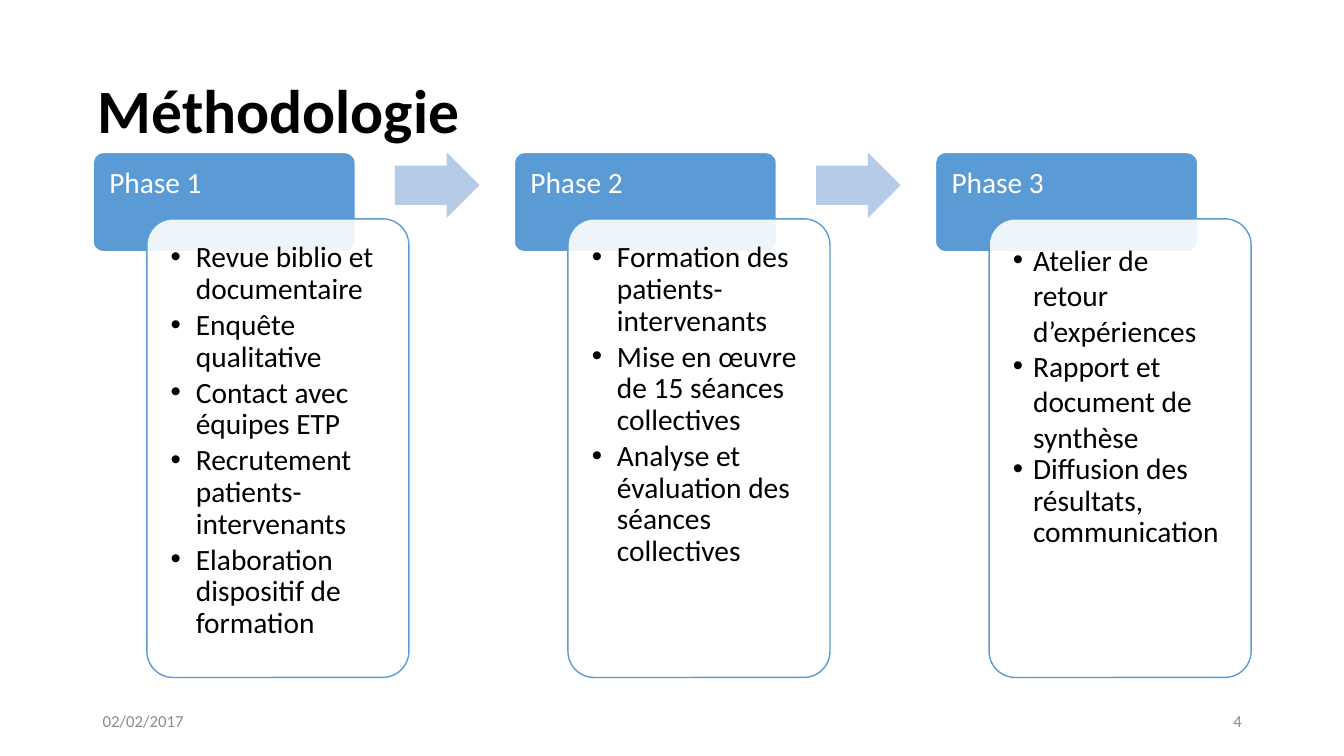
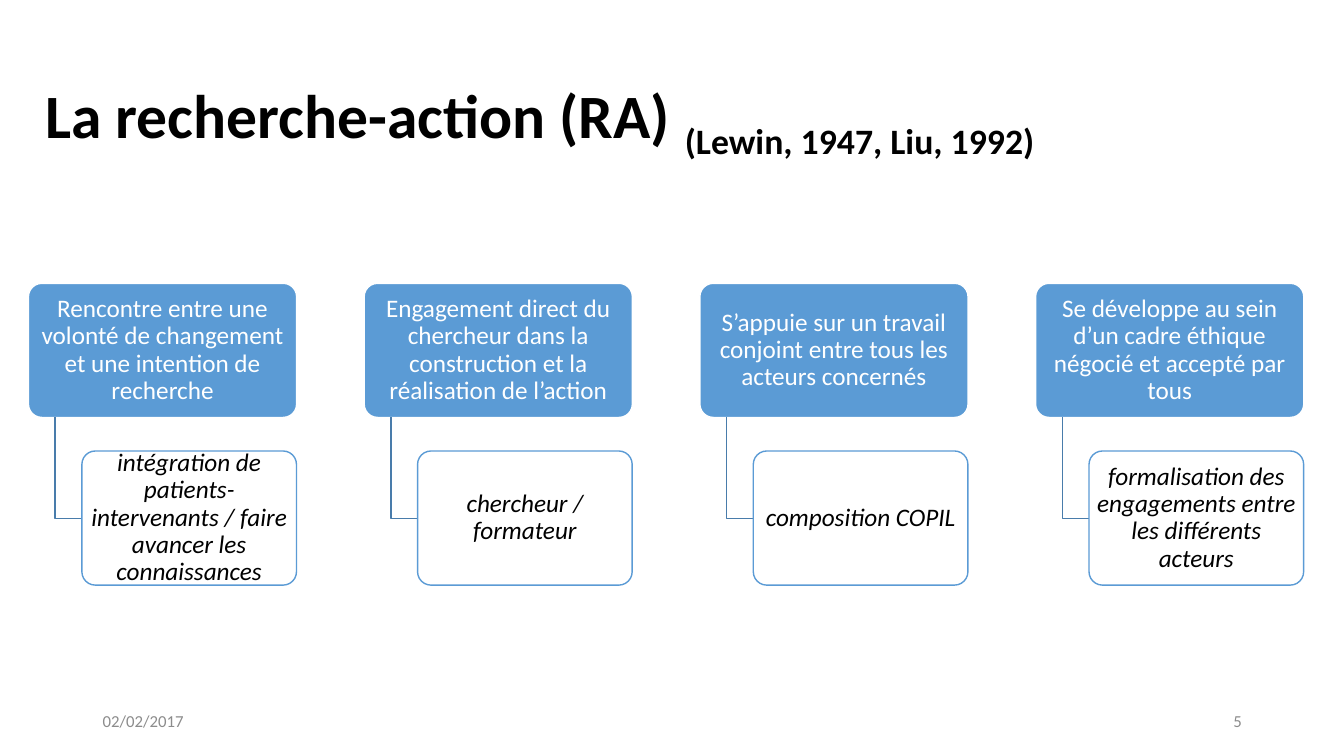
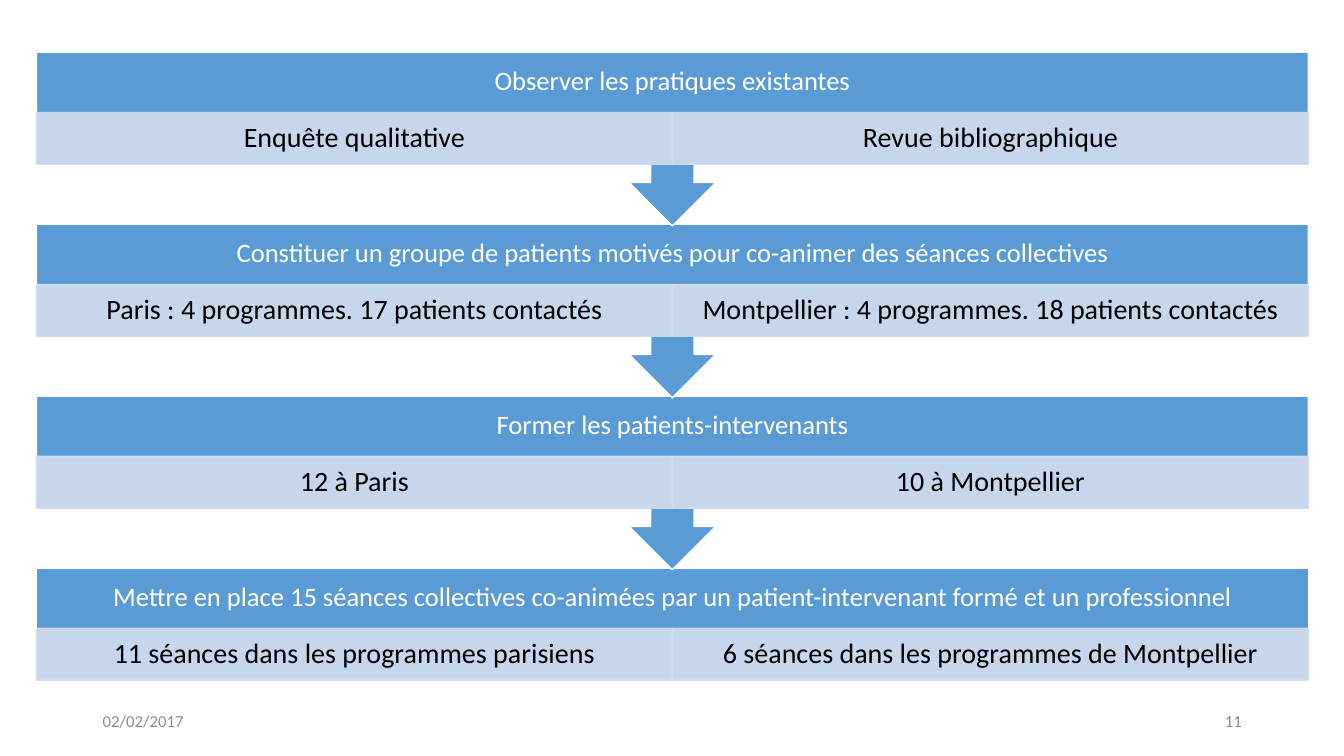
import pptx
import pptx.dml.color
import pptx.enum.shapes
import pptx.enum.text
import pptx.oxml
import pptx.oxml.ns
import pptx.util

Pt = pptx.util.Pt
RGBColor = pptx.dml.color.RGBColor
Kind = pptx.enum.shapes.MSO_SHAPE
Anchor = pptx.enum.text.MSO_ANCHOR
Align = pptx.enum.text.PP_ALIGN

FONT = "Calibri"
BLACK = RGBColor(0x00, 0x00, 0x00)
WHITE = RGBColor(0xFF, 0xFF, 0xFF)
BLUE = RGBColor(0x5B, 0x9B, 0xD5)
PALE_BLUE = RGBColor(0xD2, 0xDE, 0xEF)
ARROW_BLUE = RGBColor(0xB5, 0xCB, 0xE7)
HOOK_BLUE = RGBColor(0x49, 0x7C, 0xAB)
GREY = RGBColor(0x8C, 0x8C, 0x8C)

COMPARISON, TITLE_ONLY, BLANK = 4, 5, 6


class Builder:
    """Hold the deck, its shared style and the current page."""

    def __init__(self):
        self.deck = pptx.Presentation()
        self.deck.slide_width, self.deck.slide_height = Pt(960), Pt(540)
        self.page = None

    def start(self, layout, number):
        self.page = self.deck.slides.add_slide(self.deck.slide_layouts[layout])
        for left, align, text in ((66.24, Align.LEFT, "02/02/2017"),
                                  (678.24, Align.RIGHT, number)):
            box = self.page.shapes.add_textbox(Pt(left), Pt(500.5), Pt(216), Pt(28.75))
            self.frame(box, Anchor.MIDDLE, (7.2, 3.6, 7.2, 3.6))
            self.add_text(box.text_frame.paragraphs[0], text, 12, GREY, align, spacing=1)

    def frame(self, box, anchor, insets):
        frame = box.text_frame
        frame.word_wrap = True
        frame.auto_size = pptx.enum.text.MSO_AUTO_SIZE.NONE
        frame.vertical_anchor = anchor
        (frame.margin_left, frame.margin_top,
         frame.margin_right, frame.margin_bottom) = map(Pt, insets)

    def add_text(self, para, text, size, color, align=Align.LEFT, spacing=0.9,
                 bold=False, italic=False):
        para.alignment = align
        para.line_spacing = spacing
        para.space_before = Pt(0)
        span = para.add_run()
        span.text = text
        font = span.font
        font.name, font.size, font.bold, font.italic = FONT, Pt(size), bold, italic
        font.color.rgb = color
        return span

    def place(self, box, left, top, width, height):
        box.left, box.top, box.width, box.height = map(Pt, (left, top, width, height))

    def title(self, area, text, subscript=None):
        box = self.page.shapes.title
        self.place(box, *area)
        self.frame(box, Anchor.MIDDLE, (7.2, 3.6, 7.2, 3.6))
        para = box.text_frame.paragraphs[0]
        self.add_text(para, text, 44, BLACK, bold=True)
        if subscript:
            span = self.add_text(para, subscript, 44, BLACK, bold=True)
            span.font._element.set("baseline", "-25000")

    def block(self, kind, area, fill, line=None, faded=False):
        box = self.page.shapes.add_shape(kind, *map(Pt, area))
        box.shadow.inherit = False
        box.fill.solid()
        box.fill.fore_color.rgb = fill
        if line is None:
            box.line.fill.background()
        else:
            box.line.color.rgb = line
            box.line.width = Pt(1)
        if kind == Kind.ROUNDED_RECTANGLE:
            box.adjustments[0] = 0.1
        if faded:
            for color in box.element.spPr.iter(pptx.oxml.ns.qn("a:srgbClr")):
                if color.get("val") == str(fill):
                    color.append(pptx.oxml.parse_xml(
                        "<a:alpha %s val='90000'/>" % pptx.oxml.ns.nsdecls("a")))
        return box

    def label(self, box, text, size, color, insets, align=Align.CENTER,
              anchor=Anchor.MIDDLE, italic=False):
        self.frame(box, anchor, insets)
        self.add_text(box.text_frame.paragraphs[0], text, size, color, align, italic=italic)

    def bullets(self, slot, area, items, indent):
        box = self.page.placeholders[slot]
        self.page.shapes.element.append(box.element)
        self.place(box, *area)
        self.frame(box, Anchor.TOP, (11.5, 11.5, 11.5, 11.5))
        for index, (text, spacing, after) in enumerate(items):
            frame = box.text_frame
            para = frame.add_paragraph() if index else frame.paragraphs[0]
            self.add_text(para, text, 21, BLACK, spacing=spacing)
            para.space_after = Pt(after)
            style = para._p.get_or_add_pPr()
            style.set("marL", str(Pt(indent)))
            style.set("indent", str(-Pt(indent)))
            style.append(pptx.oxml.parse_xml(
                "<a:buFont %s typeface='Arial'/>" % pptx.oxml.ns.nsdecls("a")))
            style.append(pptx.oxml.parse_xml(
                "<a:buChar %s char='•'/>" % pptx.oxml.ns.nsdecls("a")))

    def hook(self, left, top, width, height):
        start, bend, end = ((Pt(x), Pt(y)) for x, y in (
            (left, top), (left, top + height), (left + width, top + height)))
        outline = self.page.shapes.build_freeform(*start)
        outline.add_line_segments([bend, end], close=False)
        line = outline.convert_to_shape()
        line.shadow.inherit = False
        line.fill.background()
        line.line.color.rgb = HOOK_BLUE
        line.line.width = Pt(1)

    def drop_empty(self):
        for box in list(self.page.placeholders):
            if not box.text_frame.text:
                box.element.getparent().remove(box.element)


def tight(*texts):
    return [(text, 0.9, 3) for text in texts]


def methodology(build):
    build.start(COMPARISON, "4")
    build.title((62.64, 28.75, 828, 104.4), "Méthodologie")
    phases = [
        (18, tight("Revue biblio et documentaire", "Enquête qualitative",
                   "Contact avec équipes ETP", "Recrutement patients-intervenants",
                   "Elaboration dispositif de formation")),
        (18, tight("Formation des patients-intervenants",
                   "Mise en œuvre de 15 séances collectives",
                   "Analyse et évaluation des séances collectives")),
        (14.4, [("Atelier de retour d’expériences", 1, 0),
                ("Rapport et document de synthèse", 1, 0)]
         + tight("Diffusion des résultats, communication")),
    ]
    top = 108.9
    for index, (indent, items) in enumerate(phases):
        left = 66.6 + 300.8 * index
        header = build.block(Kind.ROUNDED_RECTANGLE, (left, top, 187.2, 71), BLUE, WHITE)
        build.label(header, f"Phase {index + 1}", 21, WHITE, (9.4, 9.4, 9.4, 6.5),
                    Align.LEFT, Anchor.TOP)
        build.block(Kind.ROUNDED_RECTANGLE, (left + 38.3, top + 47.4, 187.2, 327.6),
                    WHITE, BLUE, faded=True)
        build.bullets(index + 1, (left + 43.8, top + 52.6, 176.4, 316), items, indent)
        if index < len(phases) - 1:
            arrow = build.block(Kind.RIGHT_ARROW, (left + 215.5, top, 60.4, 46.8), ARROW_BLUE)
            arrow.adjustments[0] = 0.6
    build.drop_empty()


def action_research(build):
    build.start(TITLE_ONLY, "5")
    build.title((25.2, 25.2, 856, 115.2), "La recherche-action (RA) ",
                "(Lewin, 1947, Liu, 1992)")
    principles = [
        ("Rencontre entre une volonté de changement et une intention de recherche",
         "intégration de patients-intervenants / faire avancer les connaissances"),
        ("Engagement direct du chercheur dans la construction et la réalisation de l’action",
         "chercheur / formateur"),
        ("S’appuie sur un travail conjoint entre tous les acteurs concernés",
         "composition COPIL"),
        ("Se développe au sein d’un cadre éthique négocié et accepté par tous",
         "formalisation des engagements entre les différents acteurs"),
    ]
    insets = (2.9, 2, 2.9, 2)
    top, height, step = 202.4, 95.8, 19.1
    for index, (principle, practice) in enumerate(principles):
        left = 20.3 + 239.8 * index
        header = build.block(Kind.ROUNDED_RECTANGLE, (left, top, 191.6, height), BLUE, WHITE)
        build.label(header, principle, 18, WHITE, insets)
        build.hook(left + step, top + height, step, 72)
        card = build.block(Kind.ROUNDED_RECTANGLE,
                           (left + 2 * step, top + 1.25 * height, 153.3, height),
                           WHITE, BLUE, faded=True)
        build.label(card, practice, 18, BLACK, insets, italic=True)


def steps(build):
    build.start(BLANK, "11")
    rows = [
        ("Observer les pratiques existantes",
         "Enquête qualitative", "Revue bibliographique"),
        ("Constituer un groupe de patients motivés pour co-animer des séances collectives",
         "Paris : 4 programmes. 17 patients contactés",
         "Montpellier : 4 programmes. 18 patients contactés"),
        ("Former les patients-intervenants", "12 à Paris", "10 à Montpellier"),
        ("Mettre en place 15 séances collectives co-animées par un patient-intervenant "
         "formé et un professionnel",
         "11 séances dans les programmes parisiens",
         "6 séances dans les programmes de Montpellier"),
    ]
    left, width, body, head, cell = 26, 908.6, 80.6, 43, 37
    last = len(rows) - 1
    for index in range(last, -1, -1):
        heading, *places = rows[index]
        top = 37.4 + 122.8 * index
        kind, height = ((Kind.RECTANGLE, body) if index == last
                        else (Kind.DOWN_ARROW_CALLOUT, 124))
        band = build.block(kind, (left, top, width, height), BLUE, WHITE)
        build.label(band, heading, 19, WHITE, (10.8, 10.8, 10.8, body - head + 10.8))
        for column, place in enumerate(places):
            box = build.block(Kind.RECTANGLE,
                              (left + column * width / 2, top + head, width / 2, cell),
                              PALE_BLUE, PALE_BLUE, faded=True)
            build.label(box, place, 20, BLACK, (11.5, 2, 11.5, 2))


def main():
    build = Builder()
    methodology(build)
    action_research(build)
    steps(build)
    build.deck.save("out.pptx")


if __name__ == "__main__":
    main()
